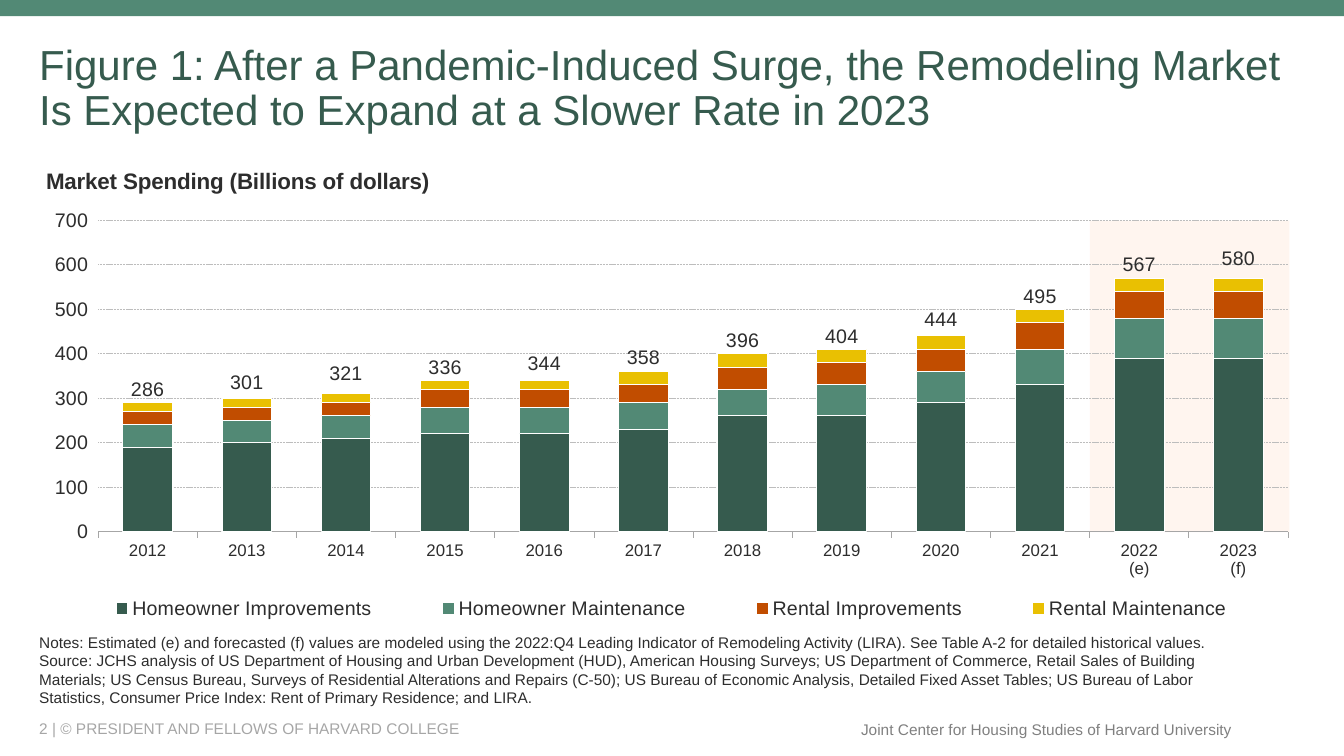
import copy

import pptx
import pptx.chart.data
import pptx.dml.color
import pptx.enum.chart
import pptx.enum.dml
import pptx.enum.shapes
import pptx.enum.text
import pptx.oxml
import pptx.oxml.ns
import pptx.util
from pptx.util import Inches

FONT = "Arial"
COLORS = {
    "band": "528975", "title": "365B4E", "text": "2D2D2D", "white": "FFFFFF",
    "highlight": "FFD9C0", "axis": "A6A6A6", "grid": "BDBDBD", "center": "808080",
}
TITLE = ("Figure 1: After a Pandemic-Induced Surge, the Remodeling Market "
         "Is Expected to Expand at a Slower Rate in 2023")
CHART_TITLE = "Market Spending (Billions of dollars)"
NOTES = [
    "Notes: Estimated (e) and forecasted (f) values are modeled using the 2022:Q4 Leading "
    "Indicator of Remodeling Activity (LIRA). See Table A-2 for detailed historical values.",
    "Source: JCHS analysis of US Department of Housing and Urban Development (HUD), American "
    "Housing Surveys; US Department of Commerce, Retail Sales of Building Materials; US Census "
    "Bureau, Surveys of Residential Alterations and Repairs (C-50); US Bureau of Economic "
    "Analysis, Detailed Fixed Asset Tables; US Bureau of Labor Statistics, Consumer Price "
    "Index: Rent of Primary Residence; and LIRA.",
]
COPYRIGHT = "2 | © PRESIDENT AND FELLOWS OF HARVARD COLLEGE"
CENTER = "Joint Center for Housing Studies of Harvard University"
YEARS = [str(year) for year in range(2012, 2022)] + ["2022\n(e)", "2023\n(f)"]
SPENDING = [
    ("Homeowner Improvements", "365B4E", [190, 200, 210, 220, 220, 230, 260, 260, 290, 330, 390, 390]),
    ("Homeowner Maintenance", "528975", [50, 50, 50, 60, 60, 60, 60, 70, 70, 80, 90, 90]),
    ("Rental Improvements", "C14D00", [30, 30, 30, 40, 40, 40, 50, 50, 50, 60, 60, 60]),
    ("Rental Maintenance", "E9C002", [20, 20, 20, 20, 20, 30, 30, 30, 30, 30, 30, 30]),
]
TOTALS = [286, 301, 321, 336, 344, 358, 396, 404, 444, 495, 567, 580]


def rgb(name):
    return pptx.dml.color.RGBColor.from_string(COLORS.get(name, name))


def set_font(font, size, color="text", bold=False):
    font.name, font.size, font.bold = FONT, pptx.util.Pt(size), bold
    font.color.rgb = rgb(color)


def set_line(line, color, width):
    line.color.rgb = rgb(color)
    line.width = pptx.util.Pt(width)


def add_text(slide, paragraphs, box, size, color="text", anchor="MIDDLE",
             align="LEFT", wrap=True, spacing=1.0):
    frame = slide.shapes.add_textbox(*map(Inches, box)).text_frame
    frame.word_wrap = wrap
    frame.vertical_anchor = pptx.enum.text.MSO_ANCHOR[anchor]
    for index, text in enumerate(paragraphs):
        paragraph = frame.add_paragraph() if index else frame.paragraphs[0]
        paragraph.alignment = pptx.enum.text.PP_ALIGN[align]
        paragraph.line_spacing = spacing
        run = paragraph.add_run()
        run.text = text
        set_font(run.font, size, color)


def add_rectangle(slide, box, color, opacity=100):
    shape = slide.shapes.add_shape(pptx.enum.shapes.MSO_SHAPE.RECTANGLE, *map(Inches, box))
    shape.shadow.inherit = False
    shape.fill.solid()
    shape.fill.fore_color.rgb = rgb(color)
    shape.line.fill.background()
    if opacity < 100:
        fill = shape.element.find(".//" + pptx.oxml.ns.qn("a:srgbClr"))
        fill.append(chart_xml(f'<a:alpha {{ns}} val="{opacity * 1000}"/>'))


def chart_xml(text):
    return pptx.oxml.parse_xml(text.replace("{ns}", pptx.oxml.ns.nsdecls("a", "c")))


def child(element, tag):
    return element.find(pptx.oxml.ns.qn(tag))


def place(element, after, inner=False, **fractions):
    """Give a chart part a manual layout, as fractions of the chart area."""
    old = child(element, "c:layout")
    if old is not None:
        element.remove(old)
    target = '<c:layoutTarget val="inner"/>' if inner else ""
    modes = "".join(f'<c:{key}Mode val="edge"/>' for key in "xy")
    sizes = "".join(f'<c:{key} val="{value}"/>' for key, value in fractions.items())
    layout = chart_xml(f"<c:layout {{ns}}><c:manualLayout>{target}{modes}{sizes}"
                       "</c:manualLayout></c:layout>")
    if after is None:
        element.insert(0, layout)
    else:
        after.addnext(layout)


def move_totals_to_second_axis(plot_area):
    """Draw the last series as clustered columns on a right-hand axis."""
    stacked = child(plot_area, "c:barChart")
    totals = copy.deepcopy(stacked)
    series_tag = pptx.oxml.ns.qn("c:ser")
    stacked.remove(stacked.findall(series_tag)[-1])
    for series in totals.findall(series_tag)[:-1]:
        totals.remove(series)
    child(totals, "c:grouping").set("val", "clustered")
    stacked.addnext(totals)

    category, value = child(plot_area, "c:catAx"), child(plot_area, "c:valAx")
    right_category, right_value = copy.deepcopy(category), copy.deepcopy(value)
    value.addnext(right_value)
    right_value.addnext(right_category)
    ids = ("5001", "5002")
    for reference, axis_id in zip(totals.findall(pptx.oxml.ns.qn("c:axId")), ids):
        reference.set("val", axis_id)
    for axis, own, other in ((right_category, *ids), (right_value, *reversed(ids))):
        child(axis, "c:axId").set("val", own)
        child(axis, "c:crossAx").set("val", other)
    child(right_category, "c:delete").set("val", "1")
    right_value.remove(child(right_value, "c:majorGridlines"))
    child(right_value, "c:axPos").set("val", "r")
    child(right_value, "c:tickLblPos").set("val", "none")
    child(right_value, "c:crosses").set("val", "max")


def add_spending_chart(slide, box):
    data = pptx.chart.data.CategoryChartData(number_format="0")
    data.categories = YEARS
    for name, _, values in SPENDING:
        data.add_series(name, values)
    data.add_series("Series 5", TOTALS)
    enums = pptx.enum.chart
    chart = slide.shapes.add_chart(
        enums.XL_CHART_TYPE.COLUMN_STACKED, *map(Inches, box), data).chart
    set_font(chart.font, 10)
    plot = chart.plots[0]
    plot.gap_width, plot.overlap, plot.vary_by_categories = 100, 100, False

    for series, (_, color, _) in zip(plot.series, SPENDING):
        series.format.fill.solid()
        series.format.fill.fore_color.rgb = rgb(color)
        set_line(series.format.line, "white", 0.75)
    totals = plot.series[-1]
    totals.format.fill.background()
    totals.format.line.fill.background()
    labels = totals.data_labels
    labels.show_value = True
    labels.position = enums.XL_LABEL_POSITION.OUTSIDE_END
    labels.number_format, labels.number_format_is_linked = "0", False
    set_font(labels.font, 14)

    years, dollars = chart.category_axis, chart.value_axis
    set_font(years.tick_labels.font, 12)
    set_line(years.format.line, "axis", 0.5)
    years.major_tick_mark = dollars.major_tick_mark = enums.XL_TICK_MARK.OUTSIDE
    dollars.minimum_scale, dollars.maximum_scale, dollars.major_unit = 0, 700, 100
    dollars.tick_labels.number_format = "#,##0"
    dollars.tick_labels.number_format_is_linked = False
    set_font(dollars.tick_labels.font, 14)
    dollars.format.line.fill.background()
    grid = dollars.major_gridlines.format.line
    set_line(grid, "grid", 0.5)
    grid.dash_style = pptx.enum.dml.MSO_LINE.SQUARE_DOT

    title = chart.chart_title
    title.include_in_layout = False
    run = title.text_frame.paragraphs[0].add_run()
    run.text = CHART_TITLE
    set_font(run.font, 16, bold=True)
    chart.has_legend = True
    legend = chart.legend
    legend.position = enums.XL_LEGEND_POSITION.BOTTOM
    legend.include_in_layout = False
    set_font(legend.font, 14)

    title_part, legend_part = title._element, legend._element
    place(title_part, child(title_part, "c:tx"), x=0.006, y=0.018)
    hidden = chart_xml(f'<c:legendEntry {{ns}}><c:idx val="{len(SPENDING)}"/>'
                       '<c:delete val="1"/></c:legendEntry>')
    child(legend_part, "c:legendPos").addnext(hidden)
    place(legend_part, hidden, x=0.014, y=0.906, w=0.971, h=0.07)
    chart_part = child(chart.element, "c:chart")
    plot_area = child(chart_part, "c:plotArea")
    place(plot_area, None, inner=True, x=0.05, y=0.137, w=0.933, h=0.645)
    move_totals_to_second_axis(plot_area)
    chart_part.addnext(chart_xml(
        "<c:spPr {ns}><a:noFill/><a:ln><a:noFill/></a:ln></c:spPr>"))


def main():
    presentation = pptx.Presentation()
    presentation.slide_width, presentation.slide_height = Inches(13.33), Inches(7.5)
    slide = presentation.slides.add_slide(presentation.slide_layouts[6])
    add_text(slide, [COPYRIGHT], (0.29, 7.13, 7.92, 0.2), 11, "axis")
    add_text(slide, [CENTER], (8.42, 7.09, 3.9, 0.29), 11, "center", align="RIGHT", wrap=False)
    add_rectangle(slide, (0, 0, 13.33, 0.16), "band")
    add_rectangle(slide, (10.81, 2.19, 1.98, 3.09), "highlight", opacity=25)
    add_text(slide, [TITLE], (0.29, 0.4, 12.65, 0.97), 30, "title", spacing=0.9)
    add_spending_chart(slide, (0.34, 1.53, 12.65, 4.79))
    add_text(slide, NOTES, (0.29, 6.48, 12.36, 0.58), 11, anchor="BOTTOM")
    presentation.save("out.pptx")


if __name__ == "__main__":
    main()
